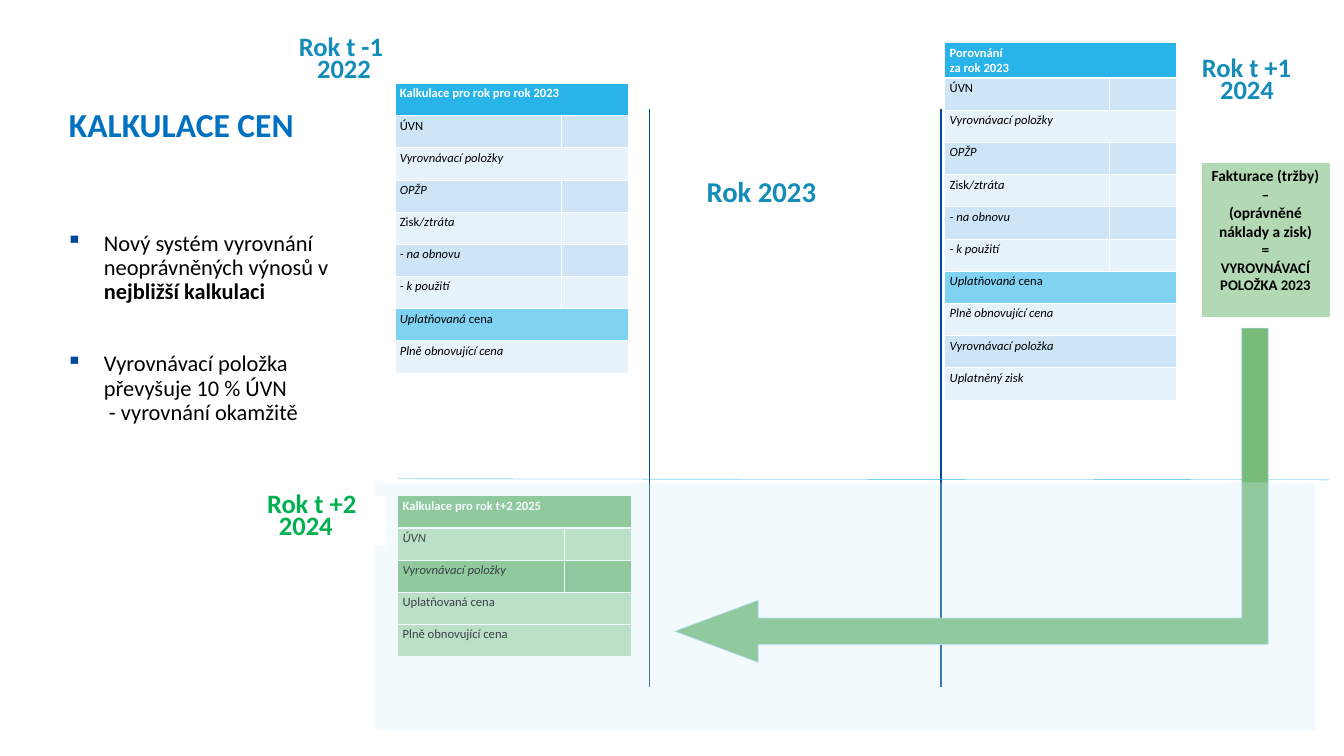
"""Build the price calculation slide with its yearly tables and balancing arrow."""
from lxml.etree import SubElement
from pptx import Presentation
from pptx.dml.color import RGBColor as Rgb
from pptx.enum.shapes import MSO_CONNECTOR as Connector, MSO_SHAPE as Shape
from pptx.enum.text import MSO_ANCHOR as Anchor, PP_ALIGN as Align
from pptx.oxml.ns import qn
from pptx.util import Pt

COLOURS = {
    "navy": "004A99", "title": "0070C0", "black": "000000", "white": "FFFFFF",
    "year": "138CBA", "next_year": "00B050", "head": "29B4E9", "band": "CDE5F7",
    "pale": "E8F2FB", "price": "7FD2F2", "green": "77BB79", "pale_green": "B3D9B4",
    "arrow_edge": "B8DAFF", "veil": "D4F0FB",
}
C = {name: Rgb.from_string(value) for name, value in COLOURS.items()}


def style(run, size, colour, bold=False, italic=False):
    font = run.font
    font.name, font.size, font.bold, font.italic = "Calibri", Pt(size), bold, italic
    font.color.rgb = C[colour]


def text_area(left, top, width, height, paragraphs, spacing):
    area = slide.shapes.add_textbox(Pt(left), Pt(top), Pt(width), Pt(height))
    frame = area.text_frame
    frame.word_wrap = True
    frame.margin_left = frame.margin_top = frame.margin_right = frame.margin_bottom = 0
    frame.text = "\n".join(paragraphs)
    for paragraph in frame.paragraphs:
        paragraph.line_spacing = spacing
    return area


deck = Presentation()
deck.slide_width, deck.slide_height = Pt(1920), Pt(1080)
slide = deck.slides.add_slide(deck.slide_layouts[6])

for x1, y1, x2, y2, colour, weight in [
    (928, 155.5, 928, 981.5, "navy", 2),
    (1344, 155.5, 1344, 981.5, "navy", 2),
    (568, 684, 1898.5, 685.5, "head", 0.5),
]:
    divider = slide.shapes.add_connector(Connector.STRAIGHT, Pt(x1), Pt(y1), Pt(x2), Pt(y2))
    divider.line.color.rgb = C[colour]
    divider.line.width = Pt(weight)
    SubElement(divider.element.spPr, qn("a:effectLst"))

for left, top, width, heading, size, colour in [
    (98.5, 155.5, 391, "KALKULACE CEN", 48, "title"),
    (1009.5, 253.5, 300, "Rok 2023", 41, "year"),
]:
    caption = text_area(left, top, width, 155.5, [heading], 0.9)
    style(caption.text_frame.paragraphs[0].runs[0], size, colour, bold=True)

rules = text_area(94.5, 331, 391, 646.5, [
    "Nový systém vyrovnání neoprávněných výnosů v ",
    "Vyrovnávací položka převyšuje 10 % ÚVN\v - vyrovnání okamžitě",
], 0.9).text_frame.paragraphs
rules[0].add_run().text = "nejbližší kalkulaci"
rules[1].space_before = Pt(69)
for rule in rules:
    props = rule._p.get_or_add_pPr()
    props.set("marL", str(Pt(54)))
    props.set("indent", str(-Pt(54)))
    bullet_colour = SubElement(props, qn("a:buClr"))
    SubElement(bullet_colour, qn("a:srgbClr"), val=COLOURS["navy"])
    SubElement(props, qn("a:buChar"), char="▪")
    for run in rule.runs:
        style(run, 32, "black")
rules[0].runs[1].font.bold = True

calculation = [
    ([("ÚVN", False)], False, "band"),
    ([("Vyrovnávací položky", True)], True, "pale"),
    ([("OPŽP", True)], False, "band"),
    ([("Zisk", False), ("/ztráta", True)], False, "pale"),
    ([("- na obnovu", True)], False, "band"),
    ([("- k použití", True)], False, "pale"),
    ([("Uplatňovaná ", True), ("cena", False)], True, "price"),
    ([("Plně obnovující cena", True)], True, "pale"),
]
comparison = calculation + [
    ([("Vyrovnávací položka", True)], True, "band"),
    ([("Uplatněný zisk", True)], True, "pale"),
]
next_calculation = [
    ([("ÚVN", True)], False, "pale_green"),
    ([("Vyrovnávací položky", True)], False, "green"),
    ([("Uplatňovaná cena", False)], True, "pale_green"),
    ([("Plně obnovující cena", False)], True, "pale_green"),
]

for left, top, label_width, heading, heading_fill, items in [
    (564, 119, 238, "Kalkulace pro rok pro rok 2023", "head", calculation),
    (1349.5, 61, 235.5, "Porovnání\nza rok 2023", "head", comparison),
    (568, 708, 238, "Kalkulace pro rok t+2 2025", "green", next_calculation),
]:
    rows = [([(heading, False)], True, heading_fill)] + items
    grid = slide.shapes.add_table(len(rows), 2, Pt(left), Pt(top),
                                  Pt(label_width + 96), Pt(46 * len(rows))).table
    grid.horz_banding = False
    grid.columns[0].width, grid.columns[1].width = Pt(label_width), Pt(96)
    for index, (parts, spans, fill) in enumerate(rows):
        grid.rows[index].height = Pt(46)
        label, amount = grid.cell(index, 0), grid.cell(index, 1)
        if spans:
            label.merge(amount)
        for cell in (label, amount):
            for side in ("lnL", "lnR", "lnT", "lnB"):
                thick = (index == 0 and side == "lnB") or (index == 1 and side == "lnT")
                border = SubElement(cell._tc.get_or_add_tcPr(), qn(f"a:{side}"),
                                    w=str(Pt(3 if thick else 1)))
                paint = SubElement(border, qn("a:solidFill"))
                SubElement(paint, qn("a:srgbClr"), val=COLOURS["white"])
            cell.fill.solid()
            cell.fill.fore_color.rgb = C[fill]
        label.text_frame.text = parts[0][0]
        for extra, _ in parts[1:]:
            label.text_frame.paragraphs[0].add_run().text = extra
        runs = [run for paragraph in label.text_frame.paragraphs for run in paragraph.runs]
        for position, run in enumerate(runs):
            italic = parts[min(position, len(parts) - 1)][1]
            style(run, 18, "white" if index == 0 else "black", index == 0, italic)

balance = slide.shapes.add_shape(Shape.RECTANGLE, Pt(1717), Pt(234), Pt(181.5), Pt(218))
balance.shadow.inherit = False
balance.fill.solid()
balance.fill.fore_color.rgb = balance.line.color.rgb = C["pale_green"]
balance.line.width = Pt(1)
balance.text_frame.word_wrap = True
balance.text_frame.vertical_anchor = Anchor.TOP
balance.text_frame.text = ("Fakturace (tržby)\n–\n(oprávněné náklady a zisk)\n=\n"
                           "VYROVNÁVACÍ POLOŽKA 2023")
for paragraph, size in zip(balance.text_frame.paragraphs, (22, 22, 22, 22, 21)):
    paragraph.alignment = Align.CENTER
    style(paragraph.runs[0], size, "black", bold=True)

carry_over = slide.shapes.add_shape(Shape.BENT_UP_ARROW, Pt(1149), Pt(283.5), Pt(477.5), Pt(848))
carry_over.shadow.inherit = False
carry_over.rotation = 270
carry_over.element.spPr.find(qn("a:xfrm")).set("flipH", "1")
for index, ratio in enumerate((0.079, 0.093, 0.25)):
    carry_over.adjustments[index] = ratio
carry_over.fill.solid()
carry_over.fill.fore_color.rgb = C["green"]
carry_over.line.color.rgb = C["arrow_edge"]
carry_over.line.width = Pt(1)

veil = slide.shapes.add_shape(Shape.RECTANGLE, Pt(535.5), Pt(689), Pt(1344), Pt(354))
veil.shadow.inherit = False
veil.fill.solid()
veil.fill.fore_color.rgb = C["veil"]
veil.line.fill.background()
SubElement(veil.element.spPr.find(".//" + qn("a:srgbClr")), qn("a:alpha"), val="28000")

for left, top, width, height, period, indent, colour in [
    (1717, 85.5, 163, 66, "Rok t +1", 26, "year"),
    (381.5, 708, 170.5, 72, "Rok t +2", 17, "next_year"),
    (427, 55.5, 163, 66, "Rok t -1", 26, "year"),
]:
    calendar_year = "2022" if period == "Rok t -1" else "2024"
    year = text_area(left, top, width, height, [period, calendar_year], 0.7)
    if colour == "next_year":
        year.fill.solid()
        year.fill.fore_color.rgb = C["white"]
    for paragraph in year.text_frame.paragraphs:
        style(paragraph.runs[0], 37.9, colour, bold=True)
    year.text_frame.paragraphs[1]._p.get_or_add_pPr().set("marL", str(Pt(indent)))

deck.save("out.pptx")
